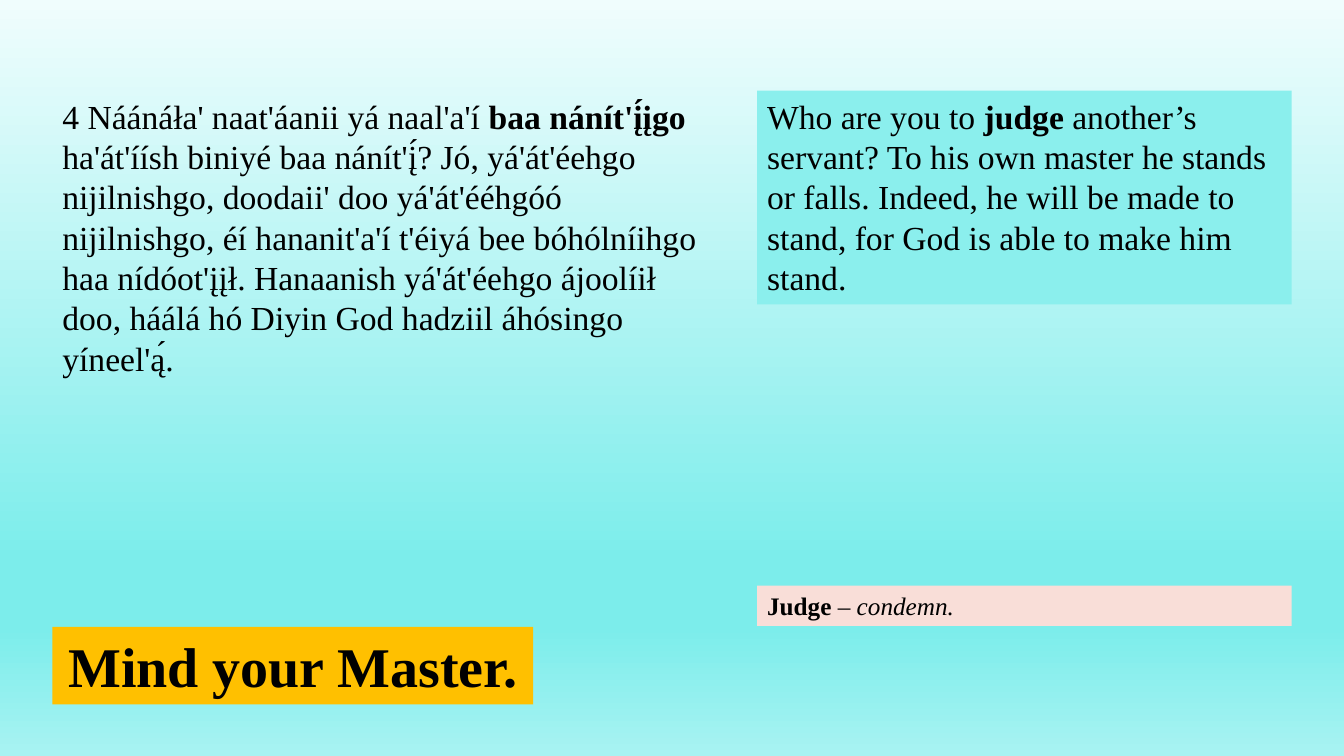
from dataclasses import dataclass
from typing import Optional

import lxml.etree
import pptx
import pptx.dml.color
import pptx.enum.shapes
import pptx.enum.text
import pptx.oxml.ns
import pptx.util

RGB = pptx.dml.color.RGBColor
Align = pptx.enum.text.PP_ALIGN
qn = pptx.oxml.ns.qn

BLACK = RGB(0x00, 0x00, 0x00)
WHITE = RGB(0xFF, 0xFF, 0xFF)
AQUA = RGB(0x8B, 0xEF, 0xED)
AMBER = RGB(0xFF, 0xC0, 0x00)
BLUSH = RGB(0xF9, 0xDE, 0xD8)
SKY_STOPS = (
    (0, RGB(0xF0, 0xFD, 0xFD)),
    (74, RGB(0x7C, 0xED, 0xEB)),
    (83, RGB(0x7C, 0xED, 0xEB)),
    (100, RGB(0xA8, 0xF3, 0xF2)),
)

FONT = "Times New Roman"
WIDTH, HEIGHT = pptx.util.Inches(13.33), pptx.util.Inches(7.5)

# Shares of the slide's size, in percent
LEFT_COL, RIGHT_COL = 3.9, 56.34
RIGHT_WIDTH = 39.76
VERSE_TOP = 12


@dataclass(frozen=True)
class Span:
    text: str
    bold: bool = False
    italic: bool = False


@dataclass(frozen=True)
class Panel:
    left: float
    top: float
    width: float
    height: float
    size: int
    spans: tuple[Span, ...]
    fill: Optional[RGB] = None
    align: Align = Align.LEFT
    wrap: bool = True
    outline: Optional[RGB] = None


PANELS = (
    # Navajo verse
    Panel(LEFT_COL, VERSE_TOP, 50.04, 39.07, 24, (
        Span("4 Náánáła' naat'áanii yá naal'a'í "),
        Span("baa nánít'į́įgo ", bold=True),
        Span("ha'át'íísh biniyé baa nánít'į́? Jó, yá'át'éehgo nijilnishgo, "
             "doodaii' doo yá'át'ééhgóó nijilnishgo, éí hananit'a'í t'éiyá bee "
             "bóhólníihgo haa nídóot'įįł. Hanaanish yá'át'éehgo ájoolíił doo, "
             "háálá hó Diyin God hadziil áhósingo yíneel'ą́."),
    )),
    # English verse
    Panel(RIGHT_COL, VERSE_TOP, RIGHT_WIDTH, 28.27, 24, (
        Span("Who are you to "),
        Span("judge", bold=True),
        Span(" another’s servant? To his own master he stands or falls. "
             "Indeed, he will be made to stand, for God is able to make him stand."),
    ), fill=AQUA),
    # Theme
    Panel(LEFT_COL, 82.93, 35.78, 10.27, 40, (Span("Mind your Master.", bold=True),),
          fill=AMBER, align=Align.CENTER, wrap=False, outline=WHITE),
    # Word note
    Panel(RIGHT_COL, 77.47, RIGHT_WIDTH, 5.33, 18, (
        Span("Judge", bold=True),
        Span(" – "),
        Span("condemn.", italic=True),
    ), fill=BLUSH),
)


def add_color(parent: lxml.etree._Element, color: RGB) -> None:
    lxml.etree.SubElement(parent, qn("a:srgbClr"), val=str(color))


def paint_background(s: pptx.slide.Slide) -> None:
    fill = s.background.fill
    fill.gradient()
    fill.gradient_angle = 270
    stops = s.background._cSld.find(".//" + qn("a:gsLst"))
    for stop in list(stops):
        stops.remove(stop)
    for percent, color in SKY_STOPS:
        add_color(lxml.etree.SubElement(stops, qn("a:gs"), pos=str(percent * 1000)), color)


def outline_text(r: pptx.text.text._Run, color: RGB) -> None:
    props = r._r.get_or_add_rPr()
    line = lxml.etree.Element(qn("a:ln"), w=str(pptx.util.Pt(0.75)))
    add_color(lxml.etree.SubElement(line, qn("a:solidFill")), color)
    props.insert(0, line)


def add_panel(s: pptx.slide.Slide, panel: Panel) -> None:
    box = (int(WIDTH * panel.left / 100), int(HEIGHT * panel.top / 100),
           int(WIDTH * panel.width / 100), int(HEIGHT * panel.height / 100))
    if panel.fill is None:
        sp = s.shapes.add_textbox(*box)
    else:
        sp = s.shapes.add_shape(pptx.enum.shapes.MSO_SHAPE.RECTANGLE, *box)
        sp.shadow.inherit = False
        sp.fill.solid()
        sp.fill.fore_color.rgb = panel.fill
        sp.line.fill.background()

    tf = sp.text_frame
    tf.word_wrap = panel.wrap
    tf.auto_size = pptx.enum.text.MSO_AUTO_SIZE.SHAPE_TO_FIT_TEXT
    tf.vertical_anchor = pptx.enum.text.MSO_ANCHOR.TOP
    p = tf.paragraphs[0]
    p.alignment = panel.align
    p.font.name = FONT
    p.font.size = pptx.util.Pt(panel.size)
    p.font.color.rgb = BLACK
    for span in panel.spans:
        r = p.add_run()
        r.text = span.text
        r.font.bold = span.bold
        r.font.italic = span.italic
        if panel.outline is not None:
            outline_text(r, panel.outline)


def main() -> None:
    prs = pptx.Presentation()
    prs.slide_width, prs.slide_height = WIDTH, HEIGHT
    s = prs.slides.add_slide(prs.slide_layouts[6])
    paint_background(s)
    for panel in PANELS:
        add_panel(s, panel)
    prs.save("out.pptx")


if __name__ == "__main__":
    main()
